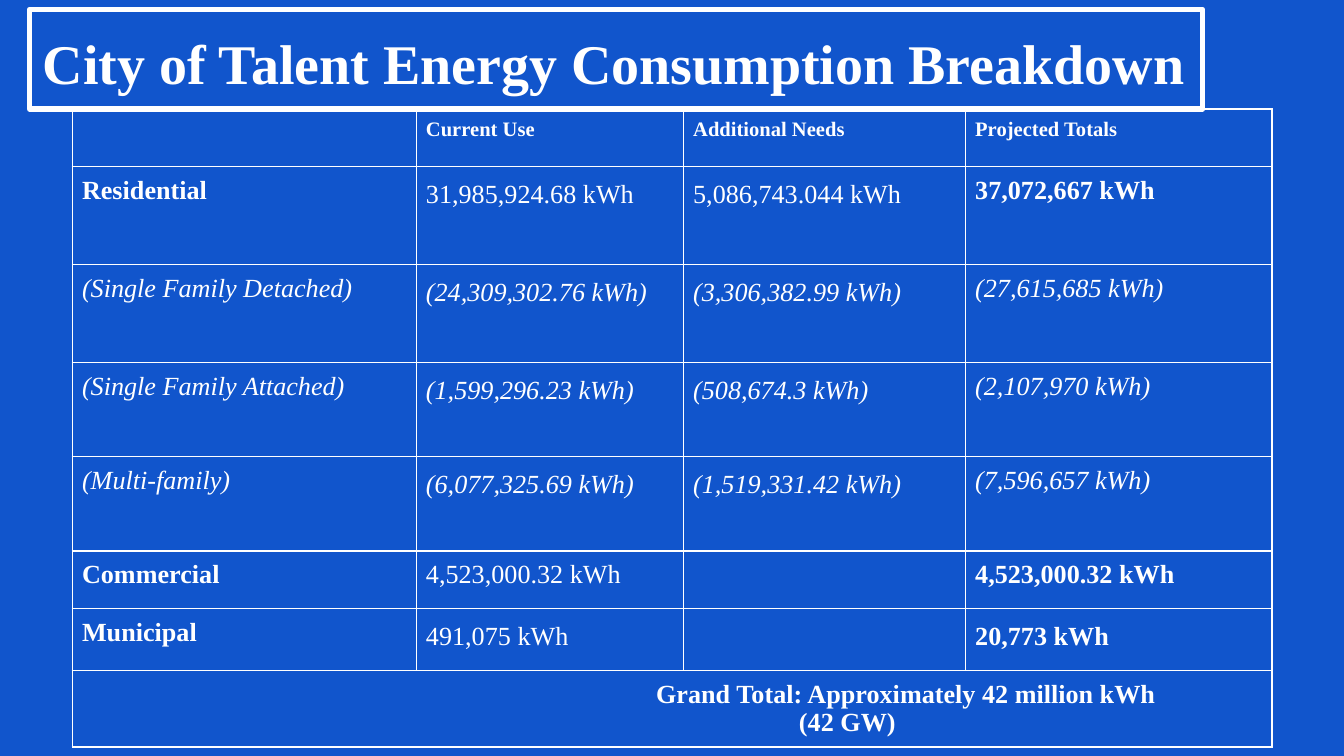
"""Build the slide with the city energy consumption table."""
import pptx
import pptx.dml.color
import pptx.enum.text
import pptx.oxml
import pptx.oxml.ns
import pptx.util
from lxml import etree

Cm = pptx.util.Cm
Pt = pptx.util.Pt

THEME = {
    "back": pptx.dml.color.RGBColor(0x11, 0x55, 0xCC),
    "ink": pptx.dml.color.RGBColor(0xFF, 0xFF, 0xFF),
    "font": "Times New Roman",
    "title": Pt(30), "head": Pt(11), "body": Pt(14),
    "frame": Pt(3), "rule": Pt(1), "loose": 1.15,
}

TITLE = "City of Talent Energy Consumption Breakdown"
HEADS = ("", "Current Use", "Additional Needs", "Projected Totals")
# Each row: height, looks (b bold, i italic, r plain), loose columns, texts
ROWS = [
    (1.09, "bbbb", (), HEADS),
    (1.85, "brrb", (1, 2),
     ("Residential", "31,985,924.68 kWh", "5,086,743.044 kWh", "37,072,667 kWh")),
    (1.85, "iiii", (1, 2),
     ("(Single Family Detached)", "(24,309,302.76 kWh)", "(3,306,382.99 kWh)",
      "(27,615,685 kWh)")),
    (1.78, "iiii", (1, 2),
     ("(Single Family Attached)", "(1,599,296.23 kWh)", "(508,674.3 kWh)",
      "(2,107,970 kWh)")),
    (1.78, "iiii", (1, 2),
     ("(Multi-family)", "(6,077,325.69 kWh)", "(1,519,331.42 kWh)",
      "(7,596,657 kWh)")),
    (1.09, "brrb", (), ("Commercial", "4,523,000.32 kWh", "", "4,523,000.32 kWh")),
    (1.17, "brrb", (1, 3), ("Municipal", "491,075 kWh", "", "20,773 kWh")),
]
TOTAL = [("Grand Total: Approximately 42 million kWh", 10.85), ("(42 GW)", 13.55)]
LAST = 1.09
COLS = (6.5, 5.05, 5.33, 5.79)


def add_run(para, text, size, look="b"):
    """Add one run in the theme's type."""
    run = para.add_run()
    run.text = text
    font = run.font
    font.name, font.size = THEME["font"], size
    font.bold, font.italic = look == "b", look == "i"
    font.color.rgb = THEME["ink"]


def set_pad(box, pad):
    """Give a cell or text frame equal margins."""
    box.margin_left = box.margin_right = box.margin_top = box.margin_bottom = pad


def rule_cell(cell):
    """Draw the four borders of a cell and clear its fill."""
    props = cell._tc.get_or_add_tcPr()
    for side in ("lnL", "lnR", "lnT", "lnB"):
        line = etree.SubElement(props, pptx.oxml.ns.qn(f"a:{side}"), w=str(THEME["rule"]))
        fill = etree.SubElement(line, pptx.oxml.ns.qn("a:solidFill"))
        etree.SubElement(fill, pptx.oxml.ns.qn("a:srgbClr"), val=str(THEME["ink"]))
    cell.fill.background()


def add_title(slide):
    """Place and frame the title."""
    title = slide.shapes.title
    title.left, title.top, title.width, title.height = map(Cm, (0.56, 0.18, 22.17, 1.88))
    title.line.color.rgb = THEME["ink"]
    title.line.width = THEME["frame"]
    etree.SubElement(title.line._ln, pptx.oxml.ns.qn("a:round"))
    frame = title.text_frame
    frame.auto_size = pptx.enum.text.MSO_AUTO_SIZE.NONE
    frame.vertical_anchor = pptx.enum.text.MSO_ANCHOR.BOTTOM
    set_pad(frame, Cm(0.25))
    para = frame.paragraphs[0]
    para.alignment = pptx.enum.text.PP_ALIGN.LEFT
    add_run(para, TITLE, THEME["title"])


def add_grid(slide):
    """Add the table with its rows and the merged total."""
    highs = [row[0] for row in ROWS] + [LAST]
    table = slide.shapes.add_table(
        len(highs), len(COLS), Cm(1.37), Cm(2.06), Cm(sum(COLS)), Cm(sum(highs))).table
    table.first_row = table.horz_banding = False
    for col, wide in zip(table.columns, COLS):
        col.width = Cm(wide)
    for row, high in zip(table.rows, highs):
        row.height = Cm(high)
        for cell in row.cells:
            rule_cell(cell)
    for r, (_, looks, loose, texts) in enumerate(ROWS):
        size = THEME["body"] if r else THEME["head"]
        for c, (text, look) in enumerate(zip(texts, looks)):
            if text:
                cell = table.cell(r, c)
                set_pad(cell, Cm(0.18))
                para = cell.text_frame.paragraphs[0]
                if c in loose:
                    para.line_spacing = THEME["loose"]
                add_run(para, text, size, look)
    end = len(ROWS)
    cell = table.cell(end, 0)
    cell.merge(table.cell(end, len(COLS) - 1))
    set_pad(cell, Cm(0.18))
    frame = cell.text_frame
    for n, (text, inset) in enumerate(TOTAL):
        para = frame.add_paragraph() if n else frame.paragraphs[0]
        para._p.get_or_add_pPr().set("marL", str(Cm(inset)))
        add_run(para, text, THEME["body"])


def main():
    """Build and save the deck."""
    deck = pptx.Presentation()
    deck.slide_width, deck.slide_height = Cm(25.4), Cm(14.29)
    slide = deck.slides.add_slide(deck.slide_layouts[5])
    slide.background.fill.solid()
    slide.background.fill.fore_color.rgb = THEME["back"]
    add_title(slide)
    add_grid(slide)
    deck.save("out.pptx")


if __name__ == "__main__":
    main()
